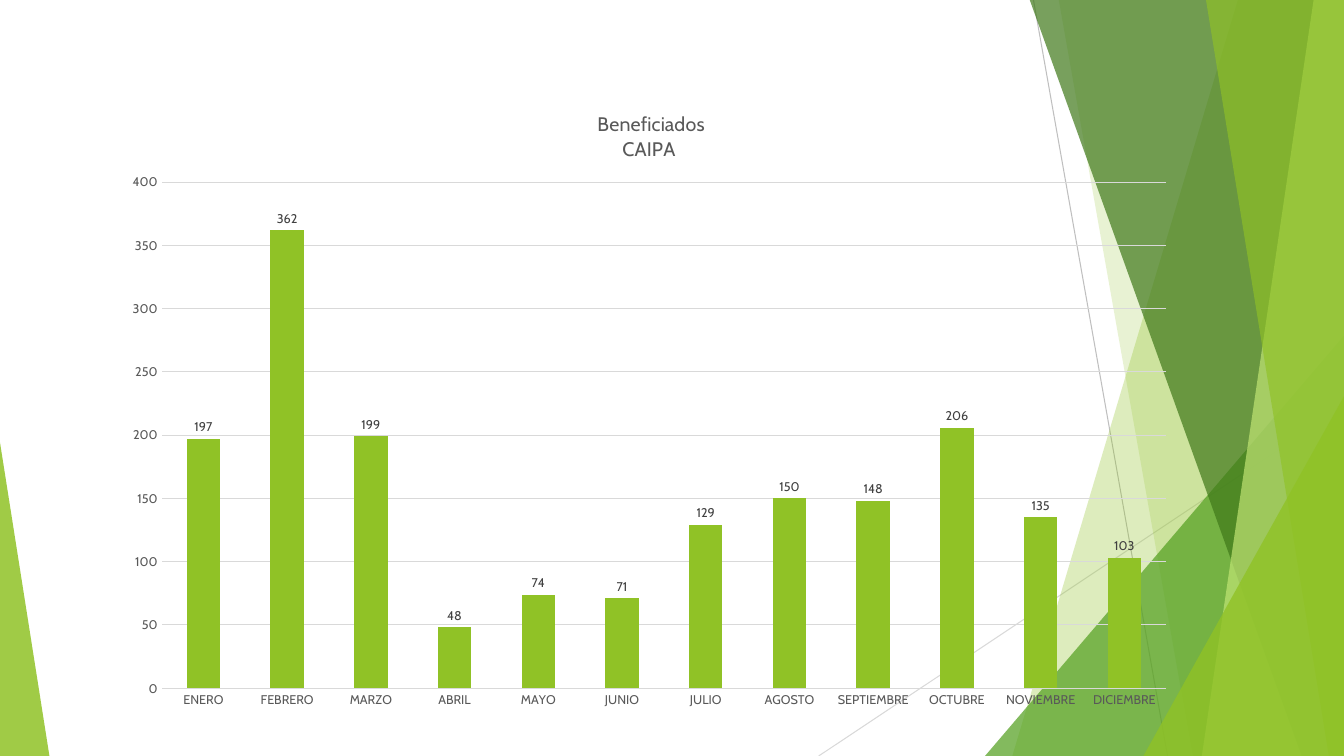
from dataclasses import dataclass

from lxml.etree import SubElement
from pptx import Presentation
from pptx.chart.data import CategoryChartData
from pptx.dml.color import RGBColor
from pptx.enum.chart import XL_CHART_TYPE, XL_LABEL_POSITION, XL_TICK_MARK
from pptx.enum.shapes import MSO_CONNECTOR, MSO_SHAPE
from pptx.oxml import parse_xml
from pptx.oxml.ns import nsdecls, qn
from pptx.util import Inches, Pt


@dataclass(frozen=True)
class Theme:
    """Colours, font and type sizes of the slide."""
    lime: str = "90C226"
    green: str = "54A021"
    forest: str = "3F7819"
    pale: str = "C0E474"
    ray: str = "BFBFBF"
    grid: str = "D9D9D9"
    muted: str = "595959"
    label: str = "404040"
    font: str = "Cabin"
    title_size: int = 14
    small_size: int = 9
    hairline: float = 0.75


THEME = Theme()
WIDTH, HEIGHT = 13.33, 7.5
BENEFICIARIES = {
    "ENERO": 197, "FEBRERO": 362, "MARZO": 199, "ABRIL": 48,
    "MAYO": 74, "JUNIO": 71, "JULIO": 129, "AGOSTO": 150,
    "SEPTIEMBRE": 148, "OCTUBRE": 206, "NOVIEMBRE": 135, "DICIEMBRE": 103,
}


def paint(facet, colour, opacity):
    """Give a facet a translucent fill without line or shadow."""
    facet.shadow.inherit = False
    facet.line.fill.background()
    facet.fill.solid()
    facet.fill.fore_color.rgb = RGBColor.from_string(colour)
    tint = facet.fill._xPr.find(qn("a:solidFill"))[0]
    SubElement(tint, qn("a:alpha"), val=str(opacity * 1000))


def add_ray(slide, start, end, colour):
    """Draw a thin straight line across the backdrop."""
    ray = slide.shapes.add_connector(
        MSO_CONNECTOR.STRAIGHT, *map(Inches, (*start, *end)))
    ray.line.color.rgb = RGBColor.from_string(colour)
    ray.line.width = Pt(THEME.hairline)
    SubElement(ray._element.spPr, qn("a:effectLst"))


def add_band(slide, right, bottom, top_x, bottom_x, colour, opacity):
    """Draw a full-height band between a slanted edge and the right side."""
    top = -0.01
    corners = [(right, top), (right, bottom), (bottom_x, bottom)]
    outline = slide.shapes.build_freeform(Inches(top_x), Inches(top))
    outline.add_line_segments([(Inches(x), Inches(y)) for x, y in corners])
    paint(outline.convert_to_shape(), colour, opacity)


def add_corner(slide, left, bottom, width, height, apex, colour, opacity):
    """Draw a triangle standing on the bottom edge."""
    corner = slide.shapes.add_shape(
        MSO_SHAPE.ISOSCELES_TRIANGLE,
        *map(Inches, (left, bottom - height, width, height)))
    corner.adjustments[0] = apex
    paint(corner, colour, opacity)


def add_backdrop(slide, width, height):
    """Layer the rays and green facets along the slide edges."""
    add_ray(slide, (width - 3.08, 0), (width - 1.75, height), THEME.ray)
    add_ray(slide, (width, 4.03), (width - 5.21, height), THEME.grid)
    add_band(slide, width, height, 12.28, 10.04, THEME.lime, 30)
    add_band(slide, width, height, 10.5, 11.83, THEME.lime, 20)
    add_corner(slide, width - 3.56, height, 3.56, 4.17, 1, THEME.green, 72)
    add_band(slide, width, height, 10.21, 12.91, THEME.forest, 70)
    add_band(slide, width, height, 13.03, 11.92, THEME.pale, 70)
    add_band(slide, width, height, 11.96, 13.18, THEME.lime, 65)
    add_corner(slide, width - 1.99, height, 1.99, 3.57, 1, THEME.lime, 80)
    add_corner(slide, 0, height, 0.49, 3.11, 0, THEME.lime, 85)


def style_font(font, size, colour):
    """Apply the theme font with a size and colour."""
    font.name = THEME.font
    font.size = Pt(size)
    font.bold = False
    font.color.rgb = RGBColor.from_string(colour)


def place(part, index, **fractions):
    """Fix a chart part at fractions of the chart box."""
    for automatic in part.findall(qn("c:layout")):
        part.remove(automatic)
    layout = parse_xml(f"<c:layout {nsdecls('c')}/>")
    manual = SubElement(layout, qn("c:manualLayout"))
    if "w" in fractions:
        SubElement(manual, qn("c:layoutTarget"), val="inner")
    for axis in "xy":
        SubElement(manual, qn(f"c:{axis}Mode"), val="edge")
    for side, fraction in fractions.items():
        SubElement(manual, qn(f"c:{side}"), val=str(fraction))
    part.insert(index, layout)


def style_axis(axis):
    """Strip an axis to its labels."""
    axis.major_tick_mark = XL_TICK_MARK.NONE
    axis.minor_tick_mark = XL_TICK_MARK.NONE
    axis.format.line.fill.background()
    style_font(axis.tick_labels.font, THEME.small_size, THEME.muted)


def add_beneficiaries_chart(slide, left, top, width, height):
    """Chart the monthly beneficiaries inside the given box."""
    monthly = CategoryChartData()
    monthly.categories = list(BENEFICIARIES)
    monthly.add_series("Beneficiados", list(BENEFICIARIES.values()))
    chart = slide.shapes.add_chart(
        XL_CHART_TYPE.COLUMN_CLUSTERED,
        *map(Inches, (left, top, width, height)), monthly).chart
    chart.has_legend = False
    style_font(chart.font, THEME.small_size, THEME.muted)

    heading = chart.chart_title.text_frame
    heading.text = "Beneficiados\nCAIPA "
    for paragraph in heading.paragraphs:
        for run in paragraph.runs:
            style_font(run.font, THEME.title_size, THEME.muted)
    place(chart.chart_title._element, 1, x=0.45, y=0.035)
    place(chart._chartSpace.chart.plotArea, 0,
          x=0.048, y=0.152, w=0.933, h=0.797)

    style_axis(chart.category_axis)
    counts = chart.value_axis
    style_axis(counts)
    counts.minimum_scale, counts.maximum_scale, counts.major_unit = 0, 400, 50
    gridline = counts.major_gridlines.format.line
    gridline.color.rgb = RGBColor.from_string(THEME.grid)
    gridline.width = Pt(THEME.hairline)

    columns = chart.plots[0]
    columns.gap_width = 150
    columns.vary_by_categories = False
    bars = columns.series[0].format.fill
    bars.solid()
    bars.fore_color.rgb = RGBColor.from_string(THEME.lime)
    columns.has_data_labels = True
    labels = columns.data_labels
    labels.show_value = True
    labels.position = XL_LABEL_POSITION.OUTSIDE_END
    style_font(labels.font, THEME.small_size, THEME.label)


def main():
    """Build and save the slide."""
    deck = Presentation()
    deck.slide_width, deck.slide_height = Inches(WIDTH), Inches(HEIGHT)
    slide = deck.slides.add_slide(deck.slide_layouts[6])
    add_backdrop(slide, WIDTH, HEIGHT)
    add_beneficiaries_chart(slide, 1.09, 0.85, 10.68, 6.3)
    deck.save("out.pptx")


if __name__ == "__main__":
    main()
